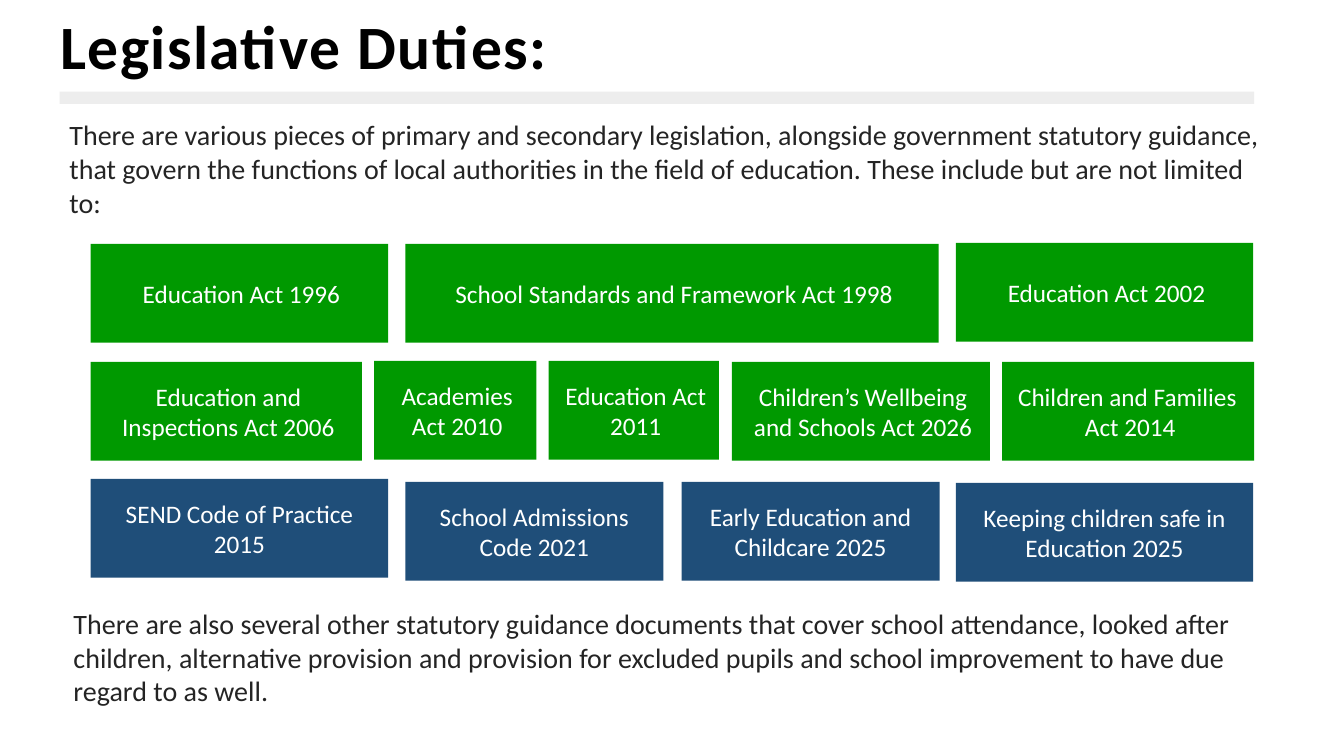
from dataclasses import dataclass

from pptx import Presentation
from pptx.dml.color import RGBColor
from pptx.enum.shapes import MSO_SHAPE
from pptx.enum.text import MSO_ANCHOR, PP_ALIGN
from pptx.util import Inches, Pt

RECT = MSO_SHAPE.RECTANGLE
TOP, MIDDLE = MSO_ANCHOR.TOP, MSO_ANCHOR.MIDDLE
LEFT, CENTER = PP_ALIGN.LEFT, PP_ALIGN.CENTER


@dataclass(frozen=True)
class Theme:
    font: str = "Calibri"
    black: str = "000000"
    body: str = "242424"
    white: str = "FFFFFF"
    act: str = "009900"
    guidance: str = "1F4E79"
    rule: str = "EDEDED"
    title_size: int = 44
    body_size: int = 20
    box_size: int = 18


def write(tf, text, *, font, size, color, bold=False, align=LEFT,
          anchor=TOP, indent=0, line_spacing=None, tracking=0):
    """Fill a text frame, one paragraph for each line of text."""
    tf.word_wrap = True
    tf.vertical_anchor = anchor
    for i, line in enumerate(text.split("\n")):
        p = tf.add_paragraph() if i else tf.paragraphs[0]
        p.alignment = align
        if line_spacing:
            p.line_spacing = line_spacing
        if indent:
            p_pr = p._p.get_or_add_pPr()
            p_pr.set("marL", str(Inches(indent)))
            p_pr.set("indent", "0")
        r = p.add_run()
        r.text = line
        r.font.name = font
        r.font.size = Pt(size)
        r.font.bold = bold
        r.font.color.rgb = RGBColor.from_string(color)
        if tracking:
            r._r.get_or_add_rPr().set("spc", str(tracking * 100))


class SlideBuilder:
    def __init__(self, s, theme):
        self.s = s
        self.theme = theme

    def text(self, text, left, top, width, height, **style):
        """Add a text box."""
        sp = self.s.shapes.add_textbox(*map(Inches, (left, top, width, height)))
        style = {"size": self.theme.body_size, "color": self.theme.body, **style}
        write(sp.text_frame, text, font=self.theme.font, **style)

    def rect(self, left, top, width, height, fill):
        """Add a plain filled rectangle."""
        sp = self.s.shapes.add_shape(RECT, *map(Inches, (left, top, width, height)))
        sp.shadow.inherit = False
        sp.fill.solid()
        sp.fill.fore_color.rgb = RGBColor.from_string(fill)
        sp.line.fill.background()
        return sp

    def box(self, text, left, top, width, fill, indent=0, height=0.98):
        """Add a rectangle labelled with a piece of legislation."""
        sp = self.rect(left, top, width, height, fill)
        write(sp.text_frame, text, font=self.theme.font, size=self.theme.box_size,
              color=self.theme.white, align=CENTER, anchor=MIDDLE, indent=indent)


# Label, left, top, width
ACTS = [
    ("Education Act 1996", 0.9, 2.42, 2.95),
    ("School Standards and Framework Act 1998", 4.02, 2.42, 5.29),
    ("Education Act 2002", 9.48, 2.41, 2.95),
    ("Education and Inspections Act 2006", 0.9, 3.59, 2.69),
    ("Academies Act 2010", 3.71, 3.58, 1.61),
    ("Education Act 2011", 5.44, 3.58, 1.69),
    ("Children’s Wellbeing and Schools Act 2026", 7.26, 3.59, 2.56),
    ("Children and Families \nAct 2014", 9.94, 3.59, 2.5),
]
GUIDANCE = [
    ("SEND Code of Practice 2015", 0.9, 4.75, 2.95),
    ("School Admissions Code 2021", 4.02, 4.78, 2.56),
    ("Early Education and Childcare 2025", 6.76, 4.78, 2.56),
    ("Keeping children safe in Education 2025", 9.48, 4.79, 2.95),
]


def main():
    prs = Presentation()
    prs.slide_width, prs.slide_height = Inches(13.33), Inches(7.5)
    theme = Theme()
    slide = SlideBuilder(prs.slides.add_slide(prs.slide_layouts[6]), theme)

    # Heading and rule
    slide.text("Legislative Duties:", 0.5, 0.13, 11.5, 0.73,
               size=theme.title_size, color=theme.black, bold=True,
               anchor=MIDDLE, line_spacing=0.9, tracking=1)
    slide.rect(0.59, 0.91, 11.85, 0.12, theme.rule)

    # Introduction
    slide.text("There are various pieces of primary and secondary legislation, "
               "alongside government statutory guidance, that govern the functions "
               "of local authorities in the field of education. These include but "
               "are not limited to:", 0.59, 1.12, 12.15, 1.11)

    # Acts in green, statutory guidance in blue
    for label, left, top, width in ACTS:
        slide.box(label, left, top, width, theme.act, indent=0.04)
    for label, left, top, width in GUIDANCE:
        slide.box(label, left, top, width, theme.guidance)

    # Closing note
    slide.text("There are also several other statutory guidance documents that "
               "cover school attendance, looked after children, alternative "
               "provision and provision for excluded pupils and school improvement "
               "to have due regard to as well.", 0.59, 5.97, 12.28, 1.11, indent=0.04)

    prs.save("out.pptx")


if __name__ == "__main__":
    main()
